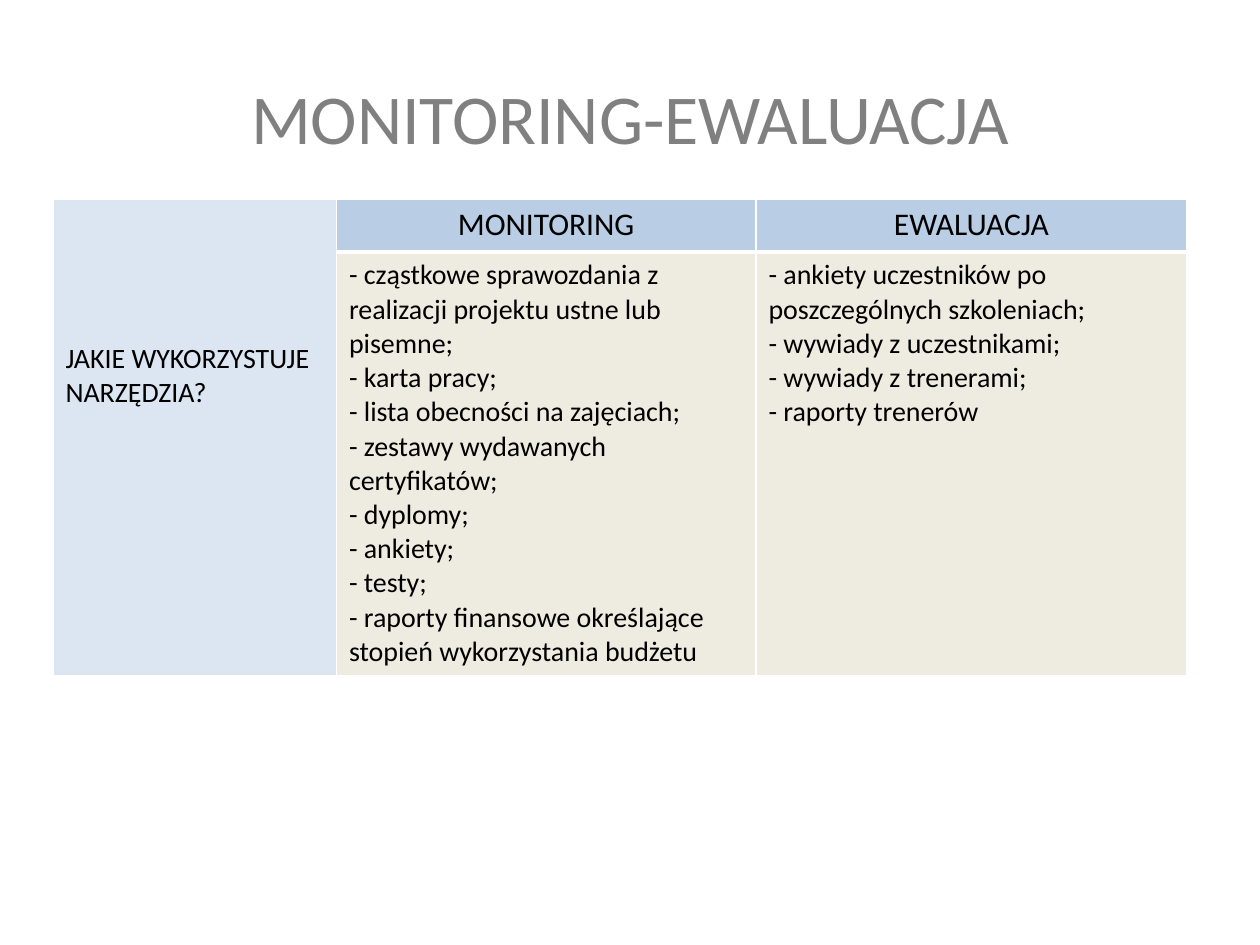
from lxml import etree
from pptx import Presentation, util as u
from pptx.dml.color import RGBColor
from pptx.enum import text
from pptx.oxml.ns import qn

BLACK = RGBColor(0x00, 0x00, 0x00)
GREY = RGBColor(0x80, 0x80, 0x80)
PALE = RGBColor(0xDC, 0xE6, 0xF2)
BLUE = RGBColor(0xB9, 0xCD, 0xE5)
SAND = RGBColor(0xEE, 0xEC, 0xE1)
WHITE = RGBColor(0xFF, 0xFF, 0xFF)
FONT = "Calibri"
LEFT, MID = text.PP_ALIGN.LEFT, text.PP_ALIGN.CENTER

COLS = (2.25, 3.33, 3.42)
ROWS = (0.42, 3.3)
ASK = "JAKIE WYKORZYSTUJE NARZĘDZIA?"
TOOLS = {
    "MONITORING": [
        "- cząstkowe sprawozdania z realizacji projektu ustne lub pisemne;",
        "- karta pracy;",
        "- lista obecności na zajęciach;",
        "- zestawy wydawanych certyfikatów;",
        "- dyplomy;",
        "- ankiety;",
        "- testy;",
        "- raporty finansowe określające stopień wykorzystania budżetu",
    ],
    "EWALUACJA": [
        "- ankiety uczestników po poszczególnych szkoleniach;",
        "- wywiady z uczestnikami;",
        "- wywiady z trenerami;",
        "- raporty trenerów",
    ],
}


def write(frame, lines, size, color, align):
    """Fill a text frame with one paragraph per line."""
    frame.text = "\n".join(lines)
    for para in frame.paragraphs:
        para.alignment = align
        font = para.font
        font.name, font.size, font.bold = FONT, u.Pt(size), False
        font.color.rgb = color


def edge(cell, top=1, low=1):
    """Draw white borders; widths in points."""
    props = cell._tc.get_or_add_tcPr()
    for side, width in zip("LRTB", (1, 1, top, low)):
        line = etree.SubElement(props, qn(f"a:ln{side}"), w=str(u.Pt(width)))
        fill = etree.SubElement(line, qn("a:solidFill"))
        etree.SubElement(fill, qn("a:srgbClr"), val=str(WHITE))


def paint(cell, lines, size, fill, align=LEFT, top=1, low=1):
    edge(cell, top, low)
    cell.fill.solid()
    cell.fill.fore_color.rgb = fill
    write(cell.text_frame, lines, size, BLACK, align)


def add_title(slide, box):
    frame = slide.shapes.add_textbox(*box).text_frame
    frame.word_wrap = True
    frame.vertical_anchor = text.MSO_ANCHOR.MIDDLE
    write(frame, ["MONITORING-EWALUACJA"], 40, GREY, MID)


def add_grid(slide, box):
    left, top, width, height = box
    grid = slide.shapes.add_table(len(ROWS), len(COLS), *box).table
    grid.horz_banding = False
    for col, share in zip(grid.columns, COLS):
        col.width = int(width * share / sum(COLS))
    for row, share in zip(grid.rows, ROWS):
        row.height = int(height * share / sum(ROWS))

    # Question spanning both rows, set four lines down
    side = grid.cell(0, 0)
    side.merge(grid.cell(1, 0))
    paint(side, [ASK], 16, PALE)
    side.margin_top = u.Inches(1.13)

    # One column of tools per heading
    for col, (head, lines) in enumerate(TOOLS.items(), 1):
        paint(grid.cell(0, col), [head], 18, BLUE, MID, low=3)
        paint(grid.cell(1, col), lines, 16, SAND, top=3)


def main():
    deck = Presentation()
    deck.slide_width, deck.slide_height = u.Inches(10), u.Inches(7.5)
    slide = deck.slides.add_slide(deck.slide_layouts[6])
    add_grid(slide, [u.Inches(n) for n in (0.42, 1.58, sum(COLS), sum(ROWS))])
    add_title(slide, [u.Inches(n) for n in (0.5, 0.3, 9, 1.25)])
    deck.save("out.pptx")


if __name__ == "__main__":
    main()
